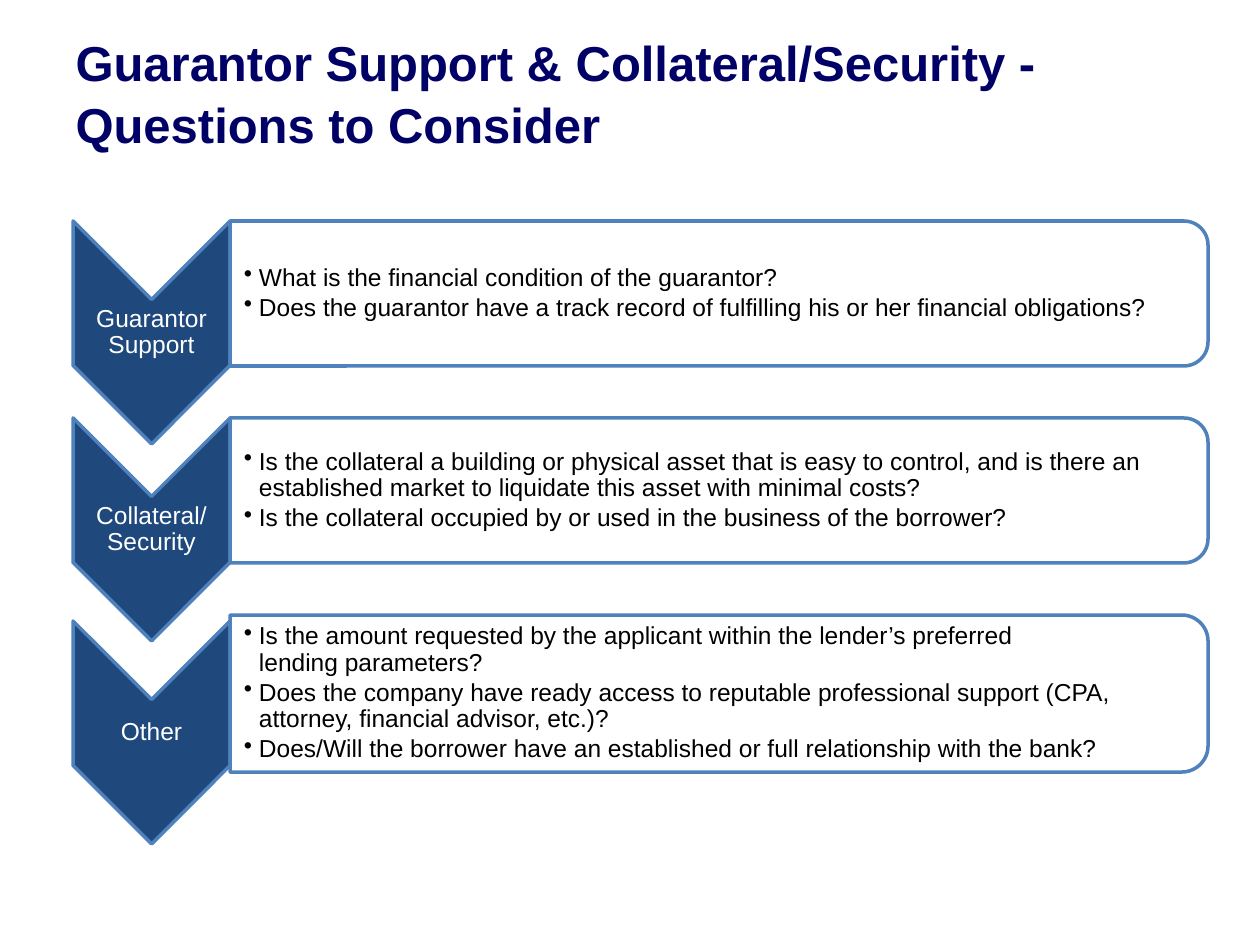
from pptx import Presentation
from pptx.dml.color import RGBColor
from pptx.enum.shapes import MSO_SHAPE
from pptx.enum.text import MSO_ANCHOR, MSO_AUTO_SIZE, PP_ALIGN
from pptx.oxml.ns import qn
from pptx.util import Emu, Pt
from lxml import etree

CHEVRON = MSO_SHAPE.CHEVRON
ROUND_TOP = MSO_SHAPE.ROUND_2_SAME_RECTANGLE
MIDDLE = MSO_ANCHOR.MIDDLE
LEFT, CENTER = PP_ALIGN.LEFT, PP_ALIGN.CENTER

NAVY = RGBColor(0x00, 0x00, 0x66)
DARK_BLUE = RGBColor(0x1F, 0x49, 0x7D)
BLUE = RGBColor(0x4F, 0x81, 0xBD)
WHITE = RGBColor(0xFF, 0xFF, 0xFF)
BLACK = RGBColor(0x00, 0x00, 0x00)

FONT = "Arial"
PX_PER_INCH = 126
ROW_LEFT, ROW_TOP, ROW_PITCH, ROW_WIDTH = 73, 221, 197, 1135
CHEVRON_WIDTH, CHEVRON_HEIGHT, NOTCH = 157, 223, 78
BAR_HEIGHT = CHEVRON_HEIGHT - NOTCH

# Label, height of the bar, questions; "\v" is a line break
ROWS = [
    ("Guarantor Support", BAR_HEIGHT, [
        "What is the financial condition of the guarantor?",
        "Does the guarantor have a track record of fulfilling his or her financial obligations?",
    ]),
    ("Collateral/ Security", BAR_HEIGHT, [
        "Is the collateral a building or physical asset that is easy to control, and is there an "
        "established market to liquidate this asset with minimal costs?",
        "Is the collateral occupied by or used in the business of the borrower?",
    ]),
    ("Other", BAR_HEIGHT + 12, [
        "Is the amount requested by the applicant within the lender’s preferred \v"
        "lending parameters?",
        "Does the company have ready access to reputable professional support "
        "(CPA, attorney, financial advisor, etc.)?",
        "Does/Will the borrower have an established or full relationship with the bank?",
    ]),
]


def px(length):
    return Emu(round(length * 914400 / PX_PER_INCH))


def add_runs(para, text, size, color, bold=False):
    for index, part in enumerate(text.split("\v")):
        if index:
            para.add_line_break()
        span = para.add_run()
        span.text = part
        span.font.name = FONT
        span.font.size = Pt(size)
        span.font.bold = bold
        span.font.color.rgb = color


def add_turned_shape(page, kind, left, top, width, height, fill):
    """Place a shape turned by 90 degrees so that it covers the given box."""
    shift = (width - height) / 2
    shape = page.shapes.add_shape(
        kind, px(left + shift), px(top - shift), px(height), px(width))
    shape.rotation = 90
    shape.shadow.inherit = False
    shape.fill.solid()
    shape.fill.fore_color.rgb = fill
    shape.line.color.rgb = BLUE
    shape.line.width = Pt(2)
    return shape


def add_text_box(page, left, top, width, height, inset_left=1):
    box = page.shapes.add_textbox(px(left), px(top), px(width), px(height))
    frame = box.text_frame
    frame.word_wrap = True
    frame.vertical_anchor = MIDDLE
    frame.margin_left = px(inset_left)
    frame.margin_top = frame.margin_right = frame.margin_bottom = px(1)
    return frame


def add_bullet(para, indent):
    properties = para._p.get_or_add_pPr()
    properties.set("marL", str(indent))
    properties.set("indent", str(-indent))
    bullet = etree.SubElement(properties, qn("a:buChar"))
    bullet.set("char", "•")


def add_title(page, left, top, width, height):
    title = page.shapes.title
    title.left, title.top = px(left), px(top)
    title.width, title.height = px(width), px(height)
    frame = title.text_frame
    frame.word_wrap = True
    frame.auto_size = MSO_AUTO_SIZE.NONE
    frame.vertical_anchor = MIDDLE
    para = frame.paragraphs[0]
    para.alignment = LEFT
    para.line_spacing = 1.05
    add_runs(para, "Guarantor Support & Collateral/Security - Questions to Consider",
             28, NAVY, bold=True)


def add_chevron(page, left, top, label):
    add_turned_shape(page, CHEVRON, left, top, CHEVRON_WIDTH, CHEVRON_HEIGHT, DARK_BLUE)
    frame = add_text_box(page, left, top + NOTCH, CHEVRON_WIDTH, BAR_HEIGHT - NOTCH)
    para = frame.paragraphs[0]
    para.alignment = CENTER
    para.line_spacing = 0.9
    add_runs(para, label, 14, WHITE)


def add_question_bar(page, left, top, width, height, questions):
    bar = add_turned_shape(page, ROUND_TOP, left, top, width, height, WHITE)
    # Fill at 90 % opacity
    color = bar._element.spPr.find(qn("a:solidFill"))[0]
    etree.SubElement(color, qn("a:alpha")).set("val", "90000")

    frame = add_text_box(page, left, top + 7, width - 8, height - 14, inset_left=14)
    for index, question in enumerate(questions):
        para = frame.add_paragraph() if index else frame.paragraphs[0]
        para.level = 1
        para.alignment = LEFT
        para.line_spacing = 0.9
        para.space_after = Pt(2)
        add_bullet(para, px(15))
        add_runs(para, question, 14, BLACK)


def add_row(page, left, top, width, height, label, questions):
    # The chevron's arms are centred on the bar
    add_chevron(page, left, top + (height - BAR_HEIGHT) // 2, label)
    add_question_bar(page, left + CHEVRON_WIDTH, top, width - CHEVRON_WIDTH, height, questions)


def main():
    deck = Presentation()
    deck.slide_width, deck.slide_height = px(1260), px(945)
    page = deck.slides.add_slide(deck.slide_layouts[5])
    add_title(page, 63, 57, 1092, 69)
    for index, (label, height, questions) in enumerate(ROWS):
        add_row(page, ROW_LEFT, ROW_TOP + index * ROW_PITCH, ROW_WIDTH, height, label, questions)
    deck.save("out.pptx")


if __name__ == "__main__":
    main()
